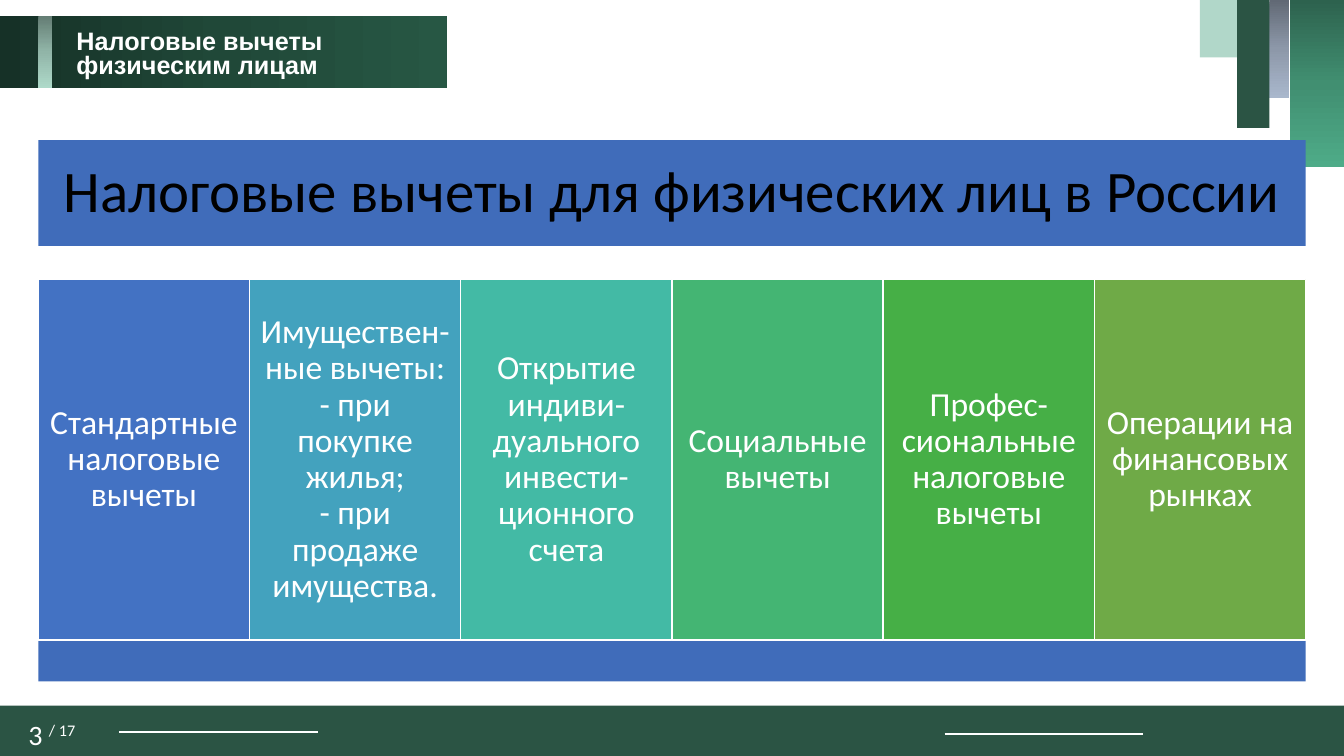
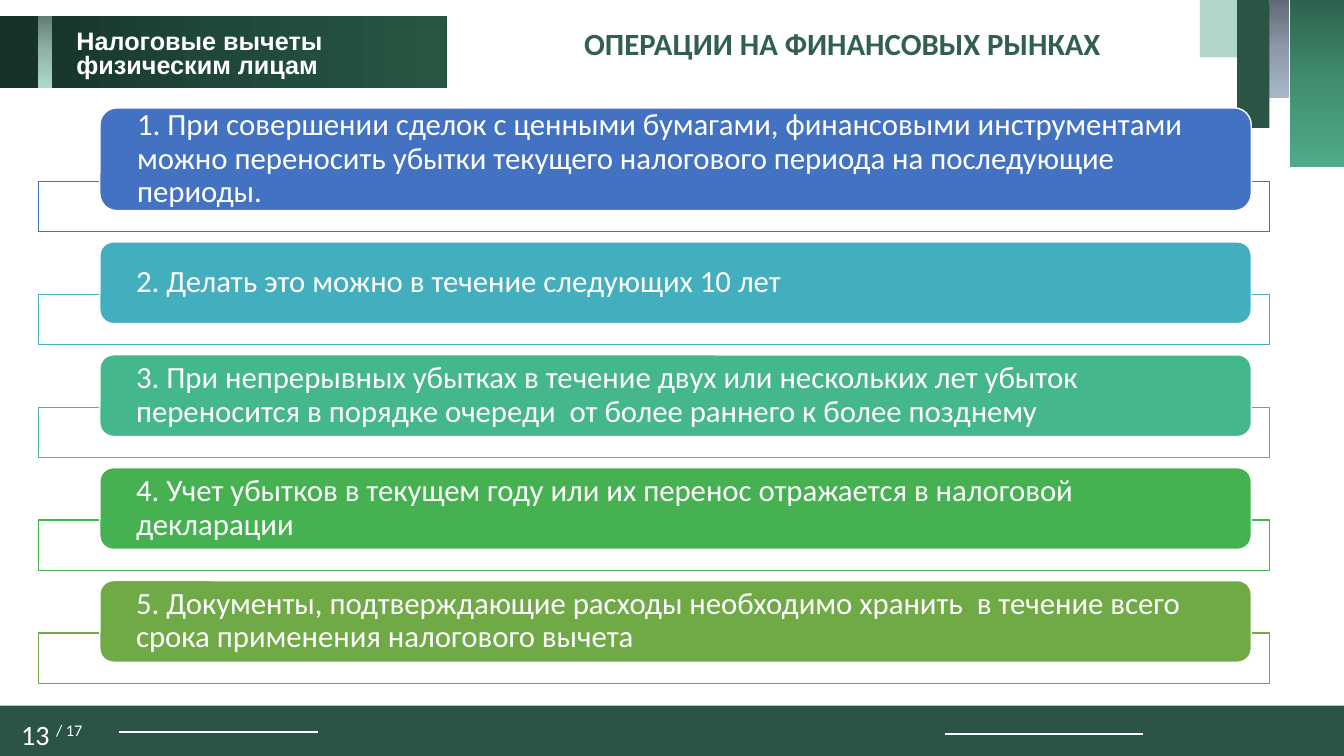
"""Builds two slides on personal tax deductions with a shared green frame."""
import copy

import lxml.etree
import pptx
import pptx.dml.color
import pptx.enum.shapes
import pptx.enum.text
import pptx.oxml.ns
import pptx.util

WIDTH, HEIGHT = 13.33, 7.5
MARGIN = 0.38
WHITE, BLACK, GREEN, BLUE, HEADING = "FFFFFF", "000000", "2B5444", "406CBA", "31614E"
PAGE_TOTAL = 17
SECTION = "Налоговые вычеты\nфизическим лицам"

BANDS = [
    ((0, 7, WIDTH, 0.5), GREEN),
    ((12.59, 0, 0.2, 0.97), ("616975", "8D98A9", "A9B7CC", 270)),
    ((12.79, 0, 0.54, 1.66), ("2D624E", "418F71", "4EAB88", 270)),
    ((11.9, 0, 0.38, 0.57), "B1D7C9"),
    ((12.27, 0, 0.32, 1.27), GREEN),
    ((0, 0.16, 4.43, 0.71), ("163127", "204838", "275744", 0)),
    ((MARGIN, 0.16, 0.14, 0.71), ("647D74", "91B5A8", "AED9C9", 270)),
]
FOOTER_RULES = [(1.18, 7.26), (9.37, 7.28)]
RULE_LENGTH = 1.97

OVERVIEW = "Налоговые вычеты для физических лиц в России"
DEDUCTIONS = [
    ("Стандартные налоговые вычеты", "4372C3"),
    ("Имуществен-ные вычеты:\n- при покупке жилья;\n- при продаже имущества.", "43A2BE"),
    ("Открытие индиви-дуального инвести-ционного счета", "43BAA5"),
    ("Социальные вычеты", "44B573"),
    ("Профес-сиональные налоговые вычеты", "46AF46"),
    ("Операции на финансовых рынках", "6FAA47"),
]

OPERATIONS = "ОПЕРАЦИИ НА ФИНАНСОВЫХ РЫНКАХ"
RULES = [
    ("1. При совершении сделок с ценными бумагами, финансовыми инструментами можно "
     "переносить убытки текущего налогового периода на последующие периоды.", "4372C3", 1.02),
    ("2. Делать это можно в течение следующих 10 лет", "43AEBD", 0.81),
    ("3. При непрерывных убытках в течение двух или нескольких лет убыток переносится "
     "в порядке очереди  от более раннего к более позднему", "44B78C", 0.81),
    ("4. Учет убытков в текущем году или их перенос отражается в налоговой декларации",
     "45B150", 0.81),
    ("5. Документы, подтверждающие расходы необходимо хранить  в течение всего срока "
     "применения налогового вычета", "6FAA47", 0.81),
]

SHAPES = pptx.enum.shapes.MSO_SHAPE
ALIGN = pptx.enum.text.PP_ALIGN
ANCHOR = pptx.enum.text.MSO_ANCHOR


def color(code):
    return pptx.dml.color.RGBColor.from_string(code)


def inches(*lengths):
    return [pptx.util.Inches(length) for length in lengths]


def paint(shape, fill):
    if isinstance(fill, str):
        shape.fill.solid()
        shape.fill.fore_color.rgb = color(fill)
        return
    *codes, angle = fill
    shape.fill.gradient()
    shape.fill.gradient_angle = angle
    first = shape.element.find(".//" + pptx.oxml.ns.qn("a:gs"))
    first.addnext(copy.deepcopy(first))
    for index, (stop, code) in enumerate(zip(shape.fill.gradient_stops, codes)):
        stop.position = index / 2
        stop.color.rgb = color(code)


def add_block(page, area, fill, line=None, kind=SHAPES.RECTANGLE):
    block = page.shapes.add_shape(kind, *inches(*area))
    block.shadow.inherit = False
    paint(block, fill)
    if line:
        block.line.color.rgb = color(line)
        block.line.width = pptx.util.Pt(1)
    else:
        block.line.fill.background()
    return block


def write(box, text, size, code=WHITE, align=ALIGN.CENTER, anchor=ANCHOR.MIDDLE,
          inset=(0.1, 0.1), spacing=0.9, font="Calibri", bold=False):
    frame = box.text_frame
    frame.word_wrap = True
    frame.auto_size = pptx.enum.text.MSO_AUTO_SIZE.NONE
    frame.vertical_anchor = anchor
    frame.margin_left = frame.margin_right = pptx.util.Inches(inset[0])
    frame.margin_top = frame.margin_bottom = pptx.util.Inches(inset[1])
    para = frame.paragraphs[0]
    para.alignment = align
    para.line_spacing = spacing
    for index, part in enumerate(text.split("\n")):
        if index:
            para.add_line_break()
        add_span(para, part, size, code, font, bold)
    return para


def add_span(para, text, size, code=WHITE, font="Calibri", bold=False):
    span = para.add_run()
    span.text = text
    span.font.name = font
    span.font.size = pptx.util.Pt(size)
    span.font.bold = bold
    span.font.color.rgb = color(code)


def add_rule(page, left, top):
    rule = page.shapes.add_connector(
        pptx.enum.shapes.MSO_CONNECTOR.STRAIGHT, *inches(left, top, left + RULE_LENGTH, top))
    rule.line.color.rgb = color(WHITE)
    rule.line.width = pptx.util.Pt(1.5)
    properties = rule.element.find(pptx.oxml.ns.qn("p:spPr"))
    lxml.etree.SubElement(properties, pptx.oxml.ns.qn("a:effectLst"))


def add_page(deck, number):
    page = deck.slides.add_slide(deck.slide_layouts.get_by_name("Title Only"))
    for area, fill in BANDS:
        add_block(page, area, fill)
    for left, top in FOOTER_RULES:
        add_rule(page, left, top)
    label = page.shapes.add_textbox(*inches(0.66, 0.26, 2.74, 0.59))
    write(label, SECTION, 18, align=ALIGN.LEFT, anchor=ANCHOR.TOP, inset=(0.1, 0.05),
          spacing=0.8, font="Arial", bold=True)
    counter = page.shapes.add_textbox(*inches(0, 7.13, 1.03, 0.37))
    para = write(counter, f"{number} ", 20, anchor=ANCHOR.TOP, inset=(0.1, 0.05), spacing=0.8)
    add_span(para, f"/ {PAGE_TOTAL}", 20)
    list(counter.element.iter(pptx.oxml.ns.qn("a:rPr")))[-1].set("baseline", "30000")
    return page


def place_title(page, area, text, size, code, **style):
    title = page.shapes.title
    title.left, title.top, title.width, title.height = inches(*area)
    write(title, text, size, code, **style)
    title.element.getparent().append(title.element)
    return title


def build_overview(deck):
    page = add_page(deck, 3)
    width = WIDTH - 2 * MARGIN
    title = place_title(page, (MARGIN, 1.39, width, 1.05), OVERVIEW, 42, BLACK,
                        inset=(0.17, 0.17))
    paint(title, BLUE)
    column = width / len(DEDUCTIONS)
    for index, (text, fill) in enumerate(DEDUCTIONS):
        area = (MARGIN + index * column, 2.77, column, 3.58)
        write(add_block(page, area, fill, WHITE), text, 24)
    add_block(page, (MARGIN, 6.36, width, 0.4), BLUE)


def build_operations(deck):
    page = add_page(deck, 13)
    place_title(page, (5.66, 0.2, 5.39, 0.47), OPERATIONS, 22, HEADING,
                anchor=ANCHOR.TOP, inset=(0.1, 0.05), spacing=1.0, bold=True)
    first, pitch, overlap = 1.8, 1.12, 0.29
    for index, (text, fill, height) in enumerate(RULES):
        top = first + index * pitch
        add_block(page, (MARGIN, top, 12.21, 0.5), WHITE, fill)
        card = add_block(page, (0.99, top + overlap - height, 11.42, height), fill, WHITE,
                         SHAPES.ROUNDED_RECTANGLE)
        write(card, text, 22, align=ALIGN.LEFT, inset=(0.32, 0))


def main():
    deck = pptx.Presentation()
    deck.slide_width, deck.slide_height = inches(WIDTH, HEIGHT)
    build_overview(deck)
    build_operations(deck)
    deck.save("out.pptx")


if __name__ == "__main__":
    main()
